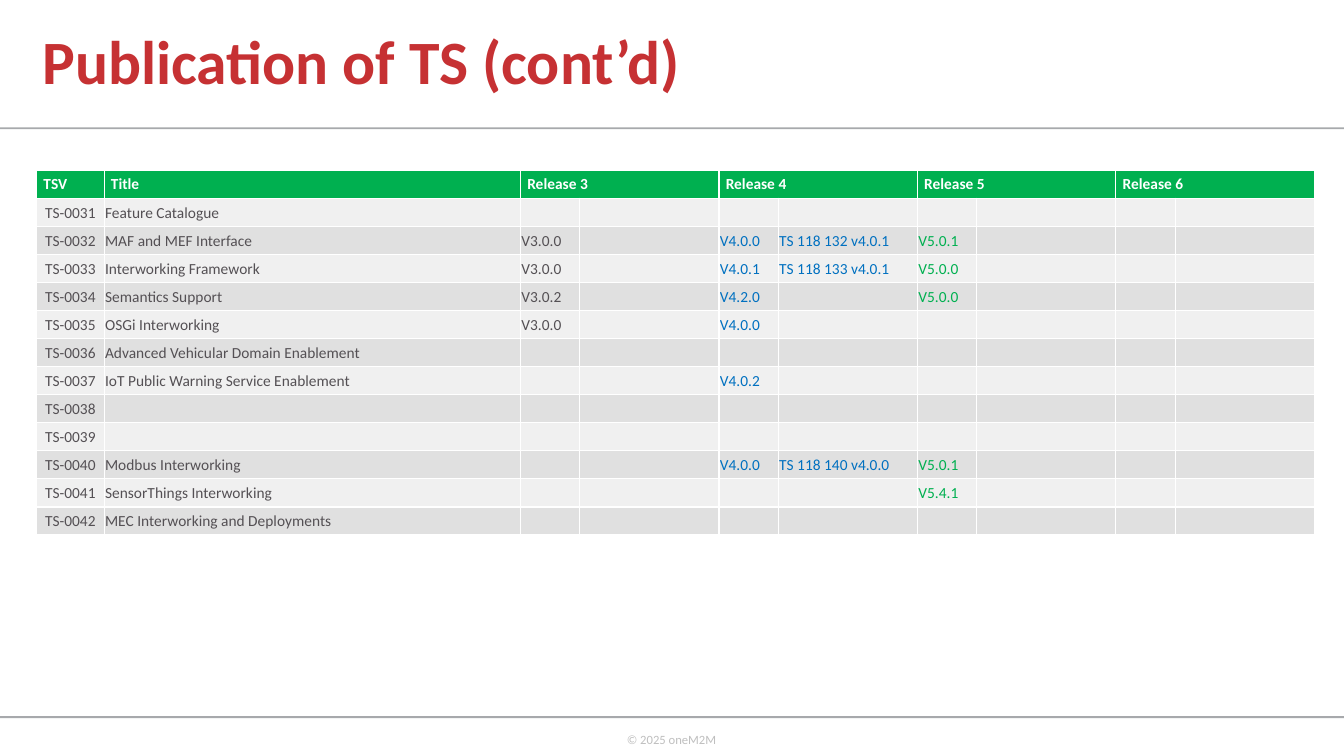
import pptx
import pptx.util
import pptx.dml.color
import pptx.enum.shapes
import pptx.enum.text
import pptx.oxml.ns
import lxml.etree

Pt = pptx.util.Pt
ANCHOR = pptx.enum.text.MSO_ANCHOR
ALIGN = pptx.enum.text.PP_ALIGN
qn = pptx.oxml.ns.qn

TITLE = "Publication of TS (cont’d)"
COPYRIGHT = "© 2025 oneM2M"
RELEASES = ["Release 3", "Release 4", "Release 5", "Release 6"]
SPECIFICATIONS = [
    ("TS-0031", "Feature Catalogue", {}),
    ("TS-0032", "MAF and MEF Interface",
     {"Release 3": ["V3.0.0"], "Release 4": ["V4.0.0", "TS 118 132 v4.0.1"], "Release 5": ["V5.0.1"]}),
    ("TS-0033", "Interworking Framework",
     {"Release 3": ["V3.0.0"], "Release 4": ["V4.0.1", "TS 118 133 v4.0.1"], "Release 5": ["V5.0.0"]}),
    ("TS-0034", "Semantics Support",
     {"Release 3": ["V3.0.2"], "Release 4": ["V4.2.0"], "Release 5": ["V5.0.0"]}),
    ("TS-0035", "OSGi Interworking", {"Release 3": ["V3.0.0"], "Release 4": ["V4.0.0"]}),
    ("TS-0036", "Advanced Vehicular Domain Enablement", {}),
    ("TS-0037", "IoT Public Warning Service Enablement", {"Release 4": ["V4.0.2"]}),
    ("TS-0038", "", {}),
    ("TS-0039", "", {}),
    ("TS-0040", "Modbus Interworking",
     {"Release 4": ["V4.0.0", "TS 118 140 v4.0.0"], "Release 5": ["V5.0.1"]}),
    ("TS-0041", "SensorThings Interworking", {"Release 5": ["V5.4.1"]}),
    ("TS-0042", "MEC Interworking and Deployments", {}),
]
COLORS = {
    "title": "C63133", "rule": "A7A9AC", "copyright": "BFBFBF", "white": "FFFFFF",
    "header": "00B050", "odd": "F0F0F0", "even": "E0E0E0", "body": "545054",
    "Release 3": "545054", "Release 4": "0070C0", "Release 5": "00B050", "Release 6": "545054",
}
FONT = "Calibri"
SLIDE_WIDTH, SLIDE_HEIGHT = 960, 540
TABLE_LEFT, TABLE_TOP, ROW_HEIGHT = 26.2, 121.6, 20.05
COLUMN_WIDTHS = [48.2, 297.4] + [42.4, 99.4] * len(RELEASES)
TABLE_SIZE = 11


def rgb(name):
    return pptx.dml.color.RGBColor.from_string(COLORS[name])


def write_text(frame, text, size, color, bold=False, align=ALIGN.LEFT, spacing=None):
    para = frame.paragraphs[0]
    para.alignment = align
    if spacing:
        para.line_spacing = spacing
    if not text:
        lxml.etree.SubElement(para._p, qn("a:endParaRPr"), sz=str(size * 100))
        return
    span = para.add_run()
    span.text = text
    span.font.name = FONT
    span.font.size = Pt(size)
    span.font.bold = bold
    span.font.color.rgb = rgb(color)


def set_margins(holder, left, top, right, bottom):
    holder.margin_left, holder.margin_top = Pt(left), Pt(top)
    holder.margin_right, holder.margin_bottom = Pt(right), Pt(bottom)


def add_borders(cell):
    properties = cell._tc.get_or_add_tcPr()
    for side in ("lnL", "lnR", "lnT", "lnB"):
        line = lxml.etree.SubElement(properties, qn("a:" + side), w=str(Pt(1)))
        fill = lxml.etree.SubElement(line, qn("a:solidFill"))
        lxml.etree.SubElement(fill, qn("a:srgbClr"), val=COLORS["white"])


def fill_cell(cell, text, background, color, margins, **text_format):
    add_borders(cell)
    cell.fill.solid()
    cell.fill.fore_color.rgb = rgb(background)
    cell.vertical_anchor = ANCHOR.MIDDLE
    set_margins(cell, *margins)
    write_text(cell.text_frame, text, TABLE_SIZE, color, **text_format)


def add_rules(page):
    for top in (90.9, 511.6):
        rule = page.shapes.add_shape(
            pptx.enum.shapes.MSO_SHAPE.RECTANGLE, 0, Pt(top), Pt(SLIDE_WIDTH), Pt(1.4))
        rule.shadow.inherit = False
        rule.fill.solid()
        rule.fill.fore_color.rgb = rgb("rule")
        rule.line.fill.background()


def add_copyright(page):
    box = page.shapes.add_textbox(Pt(444.2), Pt(519.2), Pt(73.4), Pt(18))
    box.text_frame.word_wrap = False
    set_margins(box.text_frame, 3.6, 3.6, 3.6, 3.6)
    write_text(box.text_frame, COPYRIGHT, 9, "copyright")


def add_title(page):
    title = page.shapes.title
    title.left, title.top, title.width, title.height = Pt(26.6), Pt(0), Pt(618.5), Pt(92.2)
    frame = title.text_frame
    frame.auto_size = pptx.enum.text.MSO_AUTO_SIZE.NONE
    frame.vertical_anchor = ANCHOR.MIDDLE
    set_margins(frame, 3.6, 3.6, 3.6, 3.6)
    write_text(frame, TITLE, 44, "title", bold=True, spacing=0.9)


def add_publication_table(page):
    row_count = len(SPECIFICATIONS) + 1
    table = page.shapes.add_table(
        row_count, len(COLUMN_WIDTHS), Pt(TABLE_LEFT), Pt(TABLE_TOP),
        Pt(sum(COLUMN_WIDTHS)), Pt(ROW_HEIGHT * row_count)).table
    table.horz_banding = False
    for column, width in zip(table.columns, COLUMN_WIDTHS):
        column.width = Pt(width)
    for row in table.rows:
        row.height = Pt(ROW_HEIGHT)

    headings = ["TSV", "Title"]
    for release in RELEASES:
        headings += [release, ""]
    for column, heading in enumerate(headings):
        fill_cell(table.cell(0, column), heading, "header", "white", (4.9, 0, 4.9, 0), bold=True)
    for column in range(2, len(headings), 2):
        table.cell(0, column).merge(table.cell(0, column + 1))

    for row, (number, name, versions) in enumerate(SPECIFICATIONS, start=1):
        entries = [(number, "body", ALIGN.CENTER), (name, "body", ALIGN.LEFT)]
        for release in RELEASES:
            published = (versions.get(release, []) + ["", ""])[:2]
            entries += [(text, release, ALIGN.LEFT) for text in published]
        background = "odd" if row % 2 else "even"
        for column, (text, color, align) in enumerate(entries):
            fill_cell(table.cell(row, column), text, background, color,
                      (0.7, 0.7, 0.7, 0), align=align)


def main():
    deck = pptx.Presentation()
    deck.slide_width, deck.slide_height = Pt(SLIDE_WIDTH), Pt(SLIDE_HEIGHT)
    page = deck.slides.add_slide(deck.slide_layouts.get_by_name("Title Only"))
    add_rules(page)
    add_copyright(page)
    add_title(page)
    add_publication_table(page)
    deck.save("out.pptx")


if __name__ == "__main__":
    main()
